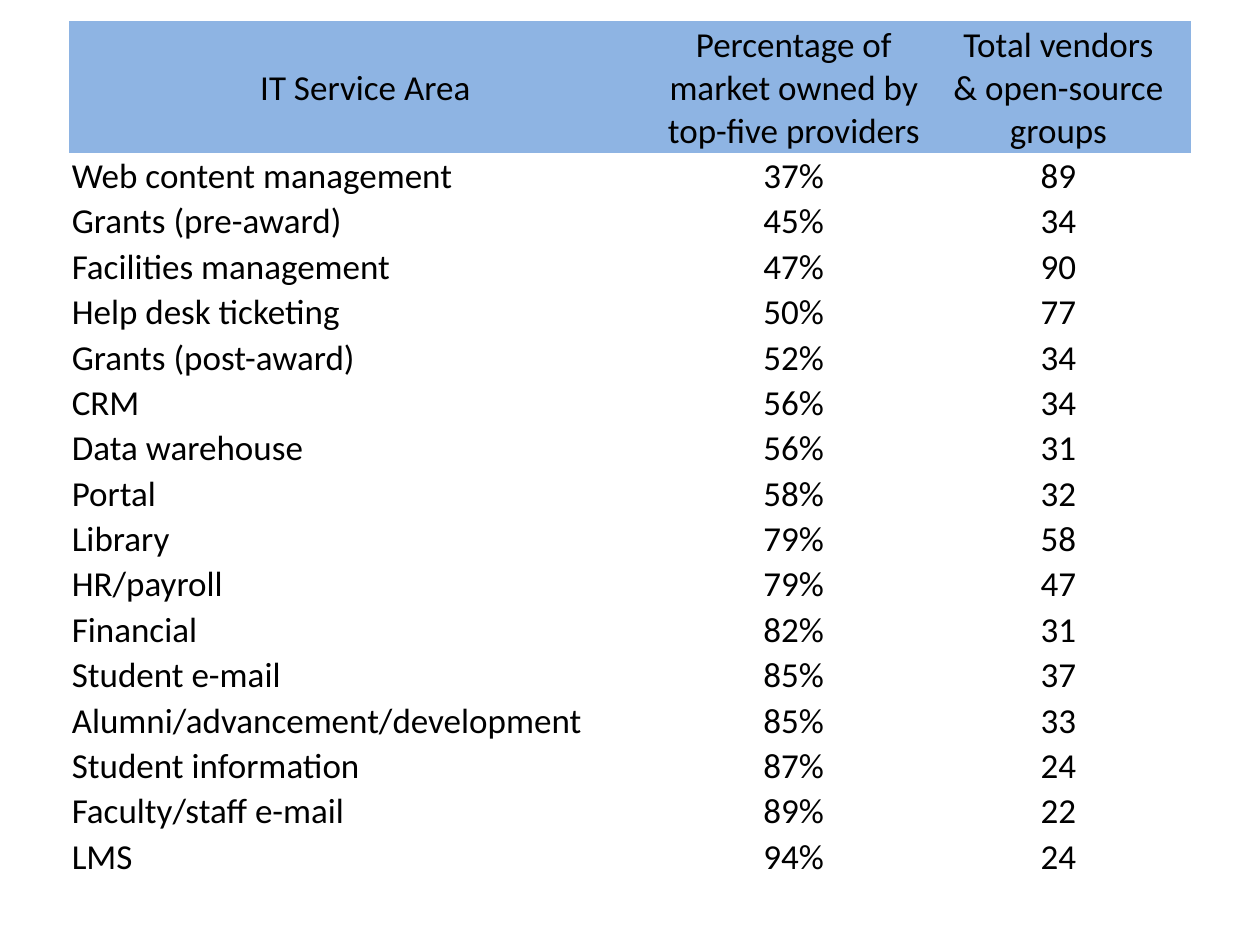
from pptx import Presentation
from pptx.dml.color import RGBColor
from pptx.enum.text import MSO_ANCHOR as Anchor, PP_ALIGN as Align
from pptx.oxml.ns import qn
from pptx.util import Inches, Pt

BLUE = RGBColor(0x8E, 0xB4, 0xE3)
BLACK = RGBColor(0, 0, 0)
PLAIN = "{2D5ABB26-0587-4C30-8999-92F81FD0307C}"  # no style, no grid

rows = [
    ("IT Service Area", "Percentage of market owned by top-five providers",
     "Total vendors\n& open-source groups"),
    ("Web content management", "37%", "89"),
    ("Grants (pre-award)", "45%", "34"),
    ("Facilities management", "47%", "90"),
    ("Help desk ticketing", "50%", "77"),
    ("Grants (post-award)", "52%", "34"),
    ("CRM", "56%", "34"),
    ("Data warehouse", "56%", "31"),
    ("Portal", "58%", "32"),
    ("Library", "79%", "58"),
    ("HR/payroll", "79%", "47"),
    ("Financial", "82%", "31"),
    ("Student e-mail", "85%", "37"),
    ("Alumni/advancement/development", "85%", "33"),
    ("Student information", "87%", "24"),
    ("Faculty/staff e-mail", "89%", "22"),
    ("LMS", "94%", "24"),
]

# Slide
prs = Presentation()
prs.slide_width, prs.slide_height = Inches(10), Inches(7.5)
slide = prs.slides.add_slide(prs.slide_layouts[6])

# Table without style, banding or grid
frame = slide.shapes.add_table(len(rows), 3, Inches(0.55), Inches(0.17),
                               Inches(8.9), Inches(6.59))
table = frame.table
table.first_row = table.horz_banding = False
for style in frame._element.iter(qn("a:tableStyleId")):
    style.text = PLAIN

# Column widths and row heights
for col, width in zip(table.columns, (4.7, 2.1, 2.1)):
    col.width = Inches(width)
for r, row in enumerate(table.rows):
    row.height = Inches(0.32 if r else 0.98)
frame.height = Inches(6.59)

# Cells: blue header, then left labels and centred figures
for r, row in enumerate(rows):
    for c, text in enumerate(row):
        cell = table.cell(r, c)
        cell.margin_left = cell.margin_right = cell.margin_top = Inches(0.02)
        cell.margin_bottom = 0
        cell.vertical_anchor = Anchor.MIDDLE if r == 0 or c == 1 else Anchor.BOTTOM
        if r == 0:
            cell.fill.solid()
            cell.fill.fore_color.rgb = BLUE
        else:
            cell.fill.background()
        cell.text_frame.text = text
        for para in cell.text_frame.paragraphs:
            para.alignment = Align.LEFT if r and c == 0 else Align.CENTER
            for run in para.runs:
                run.font.name = "Calibri"
                run.font.size = Pt(20)
                run.font.color.rgb = BLACK

prs.save("out.pptx")
